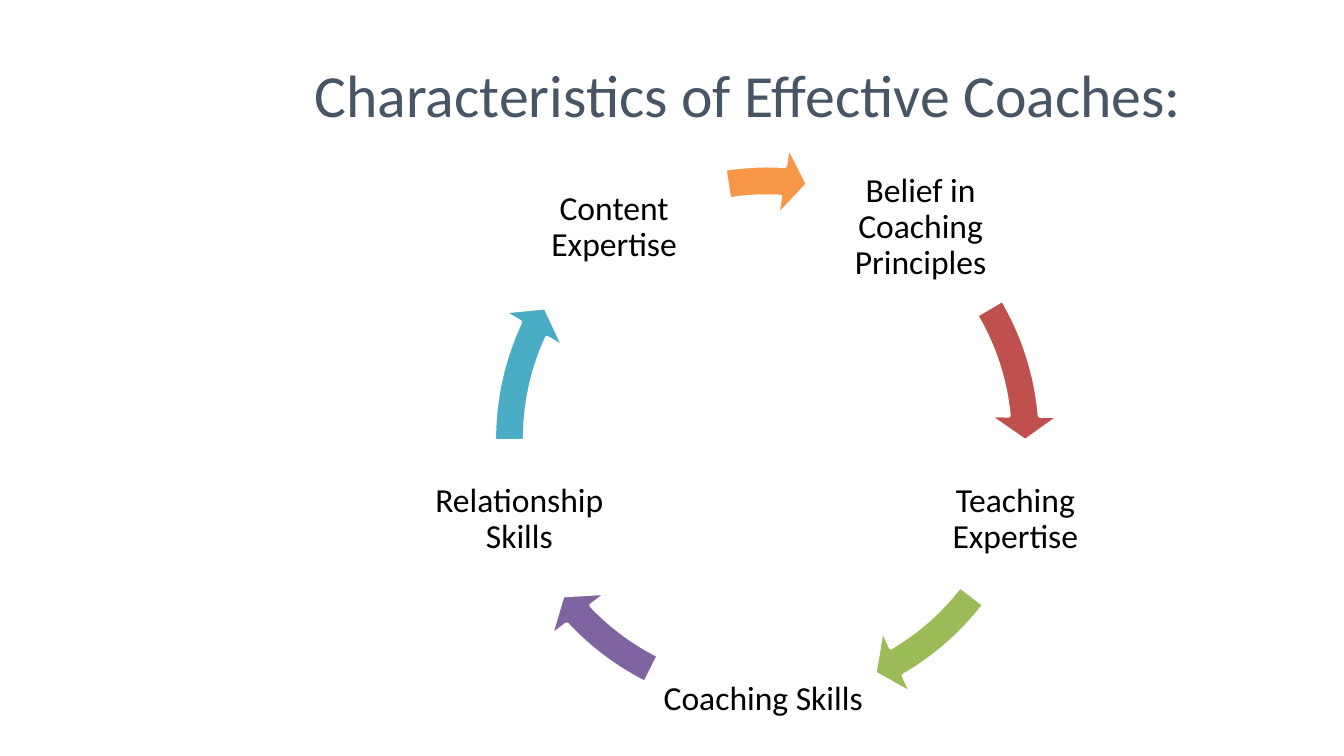
from math import cos, radians, sin
from typing import NamedTuple

from pptx import Presentation
from pptx.dml.color import RGBColor
from pptx.enum.shapes import MSO_SHAPE
from pptx.enum.text import MSO_ANCHOR, PP_ALIGN
from pptx.util import Inches, Pt

FONT = "Calibri"
SLIDE_WIDTH = 10
SLIDE_HEIGHT = SLIDE_WIDTH * 9 / 16
LABEL_WIDTH, LABEL_HEIGHT = 1.67, 1.16
LABEL_RADIUS = 1.94
FIRST_ANGLE = -54


class Step(NamedTuple):
    text: str
    fill: str
    arrow_start: float
    arrow_end: float
    nudge: float = 0


STEPS = [
    Step("Belief in Coaching Principles", "C0504D", 329.43, 354.9),
    Step("Teaching Expertise", "9BBB59", 37.46, 59.8),
    Step("Coaching Skills", "8064A2", 116.63, 136.95, -0.03),
    Step("Relationship Skills", "4BACC6", 179.51, 204.97),
    Step("Content Expertise", "F79646", 261, 273.41),
]


def colour(value):
    return RGBColor.from_string(value)


def place(shape, left, top, width, height):
    shape.left, shape.top = Inches(left), Inches(top)
    shape.width, shape.height = Inches(width), Inches(height)


def write_text(shape, text, size, value, alignment):
    frame = shape.text_frame
    frame.text = text
    frame.word_wrap = True
    frame.vertical_anchor = MSO_ANCHOR.MIDDLE
    paragraph = frame.paragraphs[0]
    paragraph.alignment = alignment
    paragraph.font.name = FONT
    paragraph.font.size = Pt(size)
    paragraph.font.color.rgb = colour(value)
    return frame


def add_title(slide, box):
    title = slide.shapes.title
    place(title, *box)
    write_text(title, "Characteristics of Effective Coaches:", 32, "485565", PP_ALIGN.LEFT)


def add_label(slide, text, center_x, center_y):
    label = slide.shapes.add_textbox(0, 0, 0, 0)
    place(label, center_x - LABEL_WIDTH / 2, center_y - LABEL_HEIGHT / 2,
          LABEL_WIDTH, LABEL_HEIGHT)
    frame = write_text(label, text, 18, "000000", PP_ALIGN.CENTER)
    frame.margin_left = frame.margin_right = Inches(0.03)
    frame.margin_top = frame.margin_bottom = Inches(0.03)
    frame.paragraphs[0].line_spacing = 0.9


def add_arrow(slide, box, step):
    arrow = slide.shapes.add_shape(MSO_SHAPE.CIRCULAR_ARROW, 0, 0, 0, 0)
    place(arrow, *box)
    angles = [degrees * 0.6 for degrees in (5.6, step.arrow_end, step.arrow_start)]
    for index, value in enumerate([0.052, *angles, 0.061]):
        arrow.adjustments[index] = value
    arrow.shadow.inherit = False
    arrow.fill.solid()
    arrow.fill.fore_color.rgb = colour(step.fill)
    arrow.line.color.rgb = colour("FFFFFF")
    arrow.line.width = Pt(2)


def add_cycle(slide, box):
    left, top, width, height = box
    for index, step in enumerate(STEPS):
        angle = radians(FIRST_ANGLE + index * 360 / len(STEPS))
        center_x = left + width / 2 + LABEL_RADIUS * cos(angle) + step.nudge
        center_y = top + height / 2 + LABEL_RADIUS * sin(angle)
        add_label(slide, step.text, center_x, center_y)
        add_arrow(slide, box, step)


def main():
    presentation = Presentation()
    presentation.slide_width = Inches(SLIDE_WIDTH)
    presentation.slide_height = Inches(SLIDE_HEIGHT)
    slide = presentation.slides.add_slide(presentation.slide_layouts[5])
    add_title(slide, (2.24, 0.23, 7.4, 0.94))
    add_cycle(slide, (3.525, 1.08, 4.37, 4.37))
    presentation.save("out.pptx")


if __name__ == "__main__":
    main()
